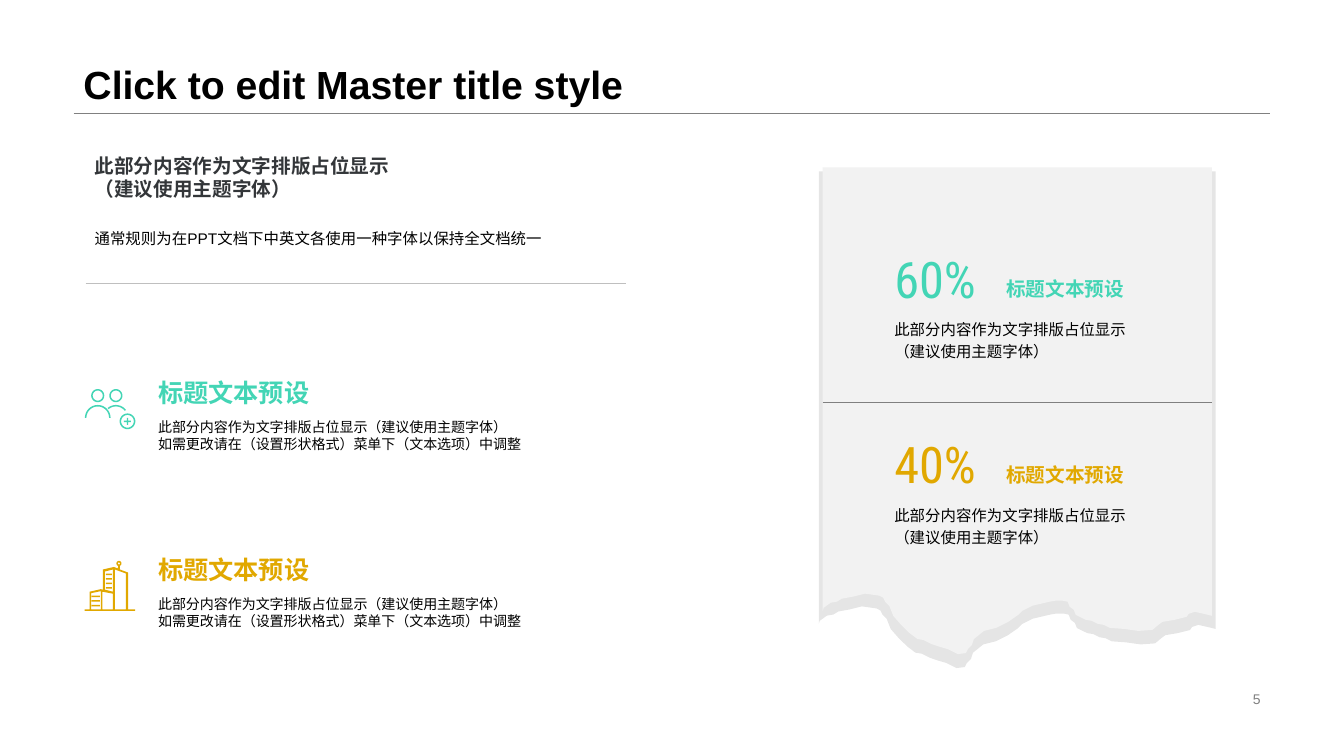
import math

import pptx
import pptx.dml.color
import pptx.enum.shapes
import pptx.enum.text
import pptx.oxml
import pptx.oxml.ns
import pptx.util

Inches = pptx.util.Inches
Pt = pptx.util.Pt
RGBColor = pptx.dml.color.RGBColor
Anchor = pptx.enum.text.MSO_ANCHOR
Align = pptx.enum.text.PP_ALIGN
qn = pptx.oxml.ns.qn

BLACK = RGBColor(0x00, 0x00, 0x00)
DARK = RGBColor(0x33, 0x36, 0x39)
GREY = RGBColor(0x80, 0x80, 0x80)
PALE = RGBColor(0xBF, 0xBF, 0xBF)
PAPER = RGBColor(0xF2, 0xF2, 0xF2)
GREEN = RGBColor(0x43, 0xD5, 0xB5)
GOLD = RGBColor(0xE1, 0xA8, 0x00)

LABEL = "标题文本预设"
NOTE = ["此部分内容作为文字排版占位显示", "（建议使用主题字体）"]
HINT = ["此部分内容作为文字排版占位显示（建议使用主题字体）",
        "如需更改请在（设置形状格式）菜单下（文本选项）中调整"]

# Torn lower edge of the paper, right to left
TEAR = [
    (12.02, 6.11), (11.94, 6.09), (11.85, 6.07), (11.79, 6.09), (11.77, 6.12),
    (11.65, 6.15), (11.53, 6.17), (11.49, 6.2), (11.43, 6.25), (11.29, 6.26),
    (11.15, 6.24), (11.01, 6.23), (10.95, 6.2), (10.89, 6.19), (10.83, 6.16),
    (10.77, 6.15), (10.67, 6.1), (10.65, 6.05), (10.61, 6.02), (10.59, 5.97),
    (10.54, 5.96), (10.47, 5.96), (10.41, 5.97), (10.24, 6.01), (10.14, 6.06),
    (10.1, 6.1), (10, 6.17), (9.88, 6.23), (9.76, 6.26), (9.66, 6.34),
    (9.64, 6.4), (9.6, 6.44), (9.58, 6.48), (9.5, 6.49), (9.4, 6.44),
    (9.33, 6.42), (9.24, 6.39), (9.16, 6.35), (9.1, 6.34), (9.02, 6.28),
    (8.93, 6.19), (8.86, 6.11), (8.82, 6.01), (8.78, 5.97), (8.76, 5.93),
    (8.72, 5.91), (8.58, 5.89), (8.46, 5.92), (8.35, 5.94), (8.3, 5.97),
    (8.24, 5.98), (8.17, 6.03), (8.16, 6.06),
]


class Deck:
    """Holds the text style and the current slide."""

    font = "Arial"

    def __init__(self):
        self.show = pptx.Presentation()
        self.show.slide_width = Inches(13.33)
        self.show.slide_height = Inches(7.5)
        self.slide = self.show.slides.add_slide(self.show.slide_layouts[6])
        self.shapes = self.slide.shapes

    def text(self, box, paras, size, color, bold=False, font=None, lead=None,
             anchor=Anchor.TOP, align=Align.LEFT, flush=False):
        """Each paragraph is a list of lines; lead spaces the first one."""
        frame = self.shapes.add_textbox(*map(Inches, box)).text_frame
        frame.word_wrap = True
        frame.vertical_anchor = anchor
        if flush:
            frame.margin_left = frame.margin_right = 0
            frame.margin_top = frame.margin_bottom = 0
        for i, lines in enumerate(paras):
            para = frame.add_paragraph() if i else frame.paragraphs[0]
            para.alignment = align
            if lead and i == 0:
                para.line_spacing = lead
            for j, line in enumerate(lines):
                if j:
                    para.add_line_break()
                run = para.add_run()
                run.text = line
                run.font.name = font or self.font
                run.font.size = Pt(size)
                run.font.bold = bold
                run.font.color.rgb = color

    def line(self, x1, y1, x2, y2, color):
        rule = self.shapes.add_connector(
            pptx.enum.shapes.MSO_CONNECTOR.STRAIGHT,
            Inches(x1), Inches(y1), Inches(x2), Inches(y2))
        rule.line.color.rgb = color
        rule.line.width = Pt(0.25)
        rule._element.spPr.append(pptx.oxml.parse_xml(
            '<a:effectLst xmlns:a="http://schemas.openxmlformats.org/drawingml/2006/main"/>'))

    def form(self, loops, color):
        """One filled outline; a loop inside another cuts a hole."""
        build = None
        for loop in loops:
            dots = [(Inches(x), Inches(y)) for x, y in loop]
            if build is None:
                build = self.shapes.build_freeform(*dots[0])
            else:
                build.move_to(*dots[0])
            build.add_line_segments(dots[1:], close=True)
        shape = build.convert_to_shape()
        shape.shadow.inherit = False
        shape.fill.solid()
        shape.fill.fore_color.rgb = color
        shape.line.fill.background()
        return shape

    def paper(self, points, color):
        sheet = self.form([points], color)
        sheet._element.spPr.find(qn("a:effectLst")).append(pptx.oxml.parse_xml(
            '<a:outerShdw xmlns:a="http://schemas.openxmlformats.org/drawingml/2006/main"'
            ' blurRad="0" dist="38100" dir="5400000" sx="102000" sy="102000" algn="t"'
            ' rotWithShape="0"><a:srgbClr val="000000"><a:alpha val="10000"/>'
            '</a:srgbClr></a:outerShdw>'))


# Outlines for the icons
def arc(x, y, r, start=0, end=360):
    turns = [math.radians(start + (end - start) * i / 32) for i in range(33)]
    return [(x + r * math.cos(t), y + r * math.sin(t)) for t in turns]


def ring(x, y, r):
    return [arc(x, y, r), arc(x, y, r - 0.015)]


def band(x, y, r, start, end):
    return arc(x, y, r, start, end) + arc(x, y, r - 0.015, end, start)


def bar(left, top, right, bottom):
    return [(left, top), (right, top), (right, bottom), (left, bottom)]


def people():
    x, y, a, b = 1.265, 4.18, 0.035, 0.007
    plus = [(-a, -b), (-b, -b), (-b, -a), (b, -a), (b, -b), (a, -b),
            (a, b), (b, b), (b, a), (-b, a), (-b, b), (-a, b)]
    return [
        *ring(0.97, 3.925, 0.065), *ring(1.15, 3.925, 0.065),
        band(0.97, 4.145, 0.127, 180, 360), band(1.15, 4.145, 0.127, 230, 322),
        *ring(x, y, 0.078), [(x + dx, y + dy) for dx, dy in plus],
    ]


def towers():
    edge = [(0.84, 6.06), (0.84, 6.045), (0.89, 6.045), (0.89, 5.87),
            (1, 5.845), (1.02, 5.85), (1.02, 5.65), (1.13, 5.625), (1.17, 5.64),
            *arc(1.18, 5.59, 0.025, 110, 430),
            (1.19, 5.65), (1.27, 5.68), (1.27, 6.045), (1.34, 6.045), (1.34, 6.06)]
    walls = [
        [(1.015, 5.87), (1.015, 6.045), (1.12, 6.045), (1.12, 5.89)],
        [(1, 5.865), (0.905, 5.885), (0.905, 6.045), (1, 6.045)],
        [(1.14, 5.65), (1.14, 6.045), (1.25, 6.045), (1.25, 5.69)],
        [(1.12, 5.65), (1.04, 5.67), (1.04, 5.85), (1.12, 5.87)],
        arc(1.18, 5.59, 0.01),
    ]
    panes = [bar(left, y, right, y + 0.015)
             for left, right, rows in ((0.91, 0.99, (5.91, 5.955, 6)),
                                       (1.05, 1.11, (5.69, 5.735, 5.78, 5.825)))
             for y in rows]
    return [edge, *walls, *panes]


def main():
    deck = Deck()

    # Title and page number
    deck.line(0.73, 1.12, 12.6, 1.12, GREY)
    deck.text((0.73, 0, 11.87, 1.12), [["Click to edit Master title style"]], 28,
              BLACK, bold=True, lead=0.9, anchor=Anchor.BOTTOM)
    deck.text((9.42, 6.82, 3.18, 0.23), [["5"]], 10, GREY,
              anchor=Anchor.MIDDLE, align=Align.RIGHT)

    # Torn paper with two shares
    deck.paper([(8.16, 1.66), (12.02, 1.66)] + TEAR, PAPER)
    for top, share, color in ((2.46, "60%", GREEN), (4.3, "40%", GOLD)):
        deck.text((8.87, top + 0.68, 2.44, 0.52), [NOTE], 11, BLACK,
                  lead=1.2, flush=True)
        deck.text((8.87, top, 1.84, 0.74), [[share]], 36, color,
                  font="Roboto Condensed", flush=True)
        deck.text((9.98, top + 0.26, 1.32, 0.29), [[LABEL]], 14, color,
                  bold=True, anchor=Anchor.MIDDLE, flush=True)
    deck.line(8.16, 3.99, 12.02, 3.99, GREY)

    # Two points with icons
    for top, color, icon in ((3.69, GREEN, people), (5.45, GOLD, towers)):
        deck.form(icon(), color)
        deck.text((1.47, top + 0.38, 4.04, 0.66), [[line] for line in HINT], 10,
                  BLACK, lead=1.2)
        deck.text((1.47, top, 4.04, 0.38), [[LABEL]], 18, color, bold=True)

    # Intro
    deck.text((0.84, 1.43, 4.74, 0.8), [[line] for line in NOTE], 14, DARK,
              bold=True, lead=1.2)
    deck.text((0.84, 2.22, 4.74, 0.76),
              [["通常规则为在PPT文档下中英文各使用一种字体以保持全文档统一"]], 11, BLACK)
    deck.line(0.85, 2.81, 6.21, 2.81, PALE)

    deck.show.save("out.pptx")


if __name__ == "__main__":
    main()
